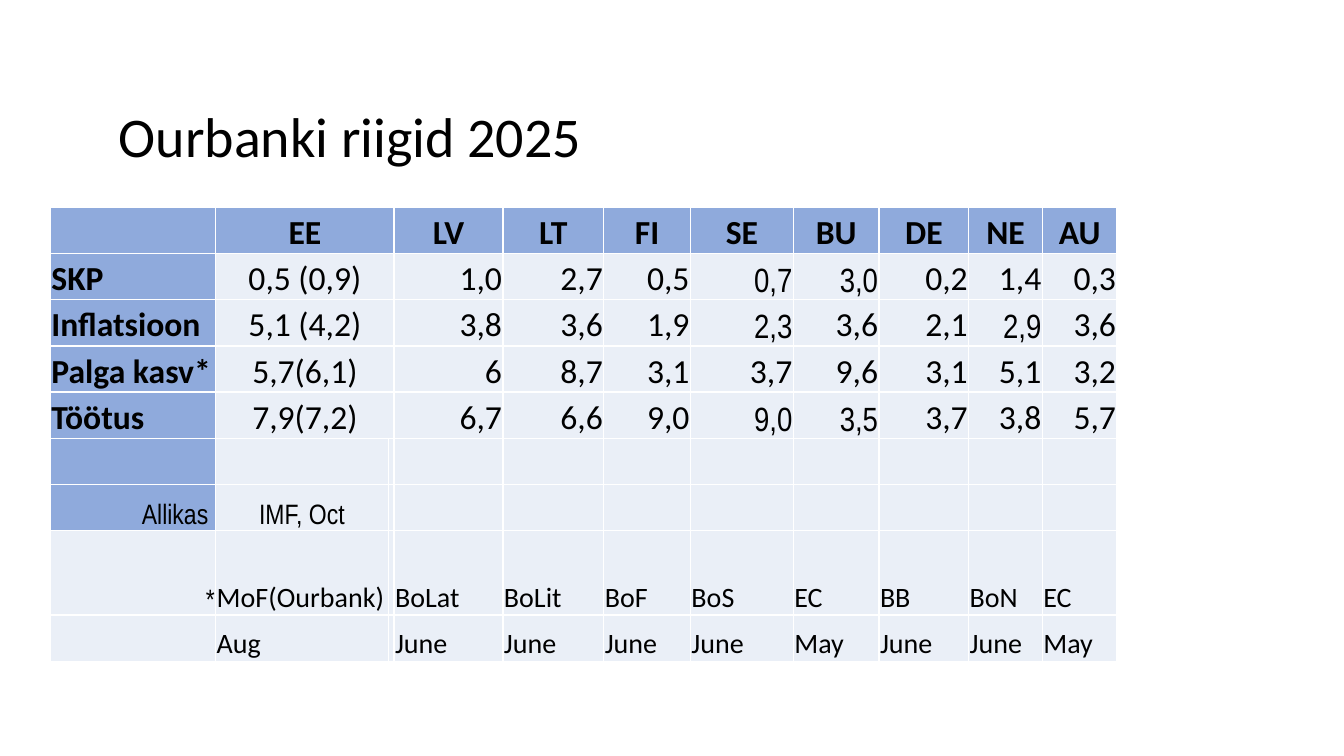
from lxml import etree
from pptx import Presentation
from pptx import util as u
from pptx.dml.color import RGBColor
from pptx.enum import text
from pptx.oxml import ns

HEADING = "Ourbanki riigid 2025"
COUNTRIES = ["", "EE", "LV", "LT", "FI", "SE", "BU", "DE", "NE", "AU"]
INDICATORS = [
    ["SKP", "0,5 (0,9)", "1,0", "2,7", "0,5", "0,7", "3,0", "0,2", "1,4", "0,3"],
    ["Inflatsioon", "5,1 (4,2)", "3,8", "3,6", "1,9", "2,3", "3,6", "2,1", "2,9", "3,6"],
    ["Palga kasv*", "5,7(6,1)", "6", "8,7", "3,1", "3,7", "9,6", "3,1", "5,1", "3,2"],
    ["Töötus", "7,9(7,2)", "6,7", "6,6", "9,0", "9,0", "3,5", "3,7", "3,8", "5,7"],
]
SOURCES = [
    [""] * 10,
    ["Allikas ", "IMF, Oct"] + [""] * 8,
    ["*", "MoF(Ourbank)", "BoLat", "BoLit", "BoF", "BoS", "EC", "BB", "BoN", "EC"],
    ["", "Aug", "June", "June", "June", "June", "May", "June", "June", "May"],
]
ROWS = [COUNTRIES] + INDICATORS + SOURCES
SOURCES_START = 1 + len(INDICATORS)
ALLIKAS_ROW = SOURCES_START + 1
NARROW_CELLS = {(1, 5), (1, 6), (2, 5), (2, 8), (4, 5), (4, 6),
                (ALLIKAS_ROW, 0), (ALLIKAS_ROW, 1), (ALLIKAS_ROW + 1, 0)}
COLUMN_WIDTHS = [1.64, 1.71, 0.05, 1.08, 1, 0.86, 1.02, 0.85, 0.89, 0.73, 0.74]
TABLE_HEIGHT = 4.5
TALL_ROW = ALLIKAS_ROW + 1
TALL_HEIGHT = 0.84
GAP_COLUMN = 2
COLORS = {"label": "8FAADC", "body": "EAEFF7", "border": "FFFFFF", "ink": "000000"}
CELL_FORMAT = {
    "vertical_anchor": text.MSO_ANCHOR.BOTTOM,
    "margin_left": u.Inches(0.01),
    "margin_right": u.Inches(0.01),
    "margin_top": u.Inches(0.01),
    "margin_bottom": 0,
}
HEADING_FORMAT = {"word_wrap": True, "vertical_anchor": text.MSO_ANCHOR.MIDDLE}


def apply(target, values):
    for name, value in values.items():
        setattr(target, name, value)


def write(paragraph, words, size, face="Calibri", bold=False):
    run = paragraph.add_run()
    run.text = words
    apply(run.font, {"size": u.Pt(size), "name": face, "bold": bold})
    run.font.color.rgb = RGBColor.from_string(COLORS["ink"])


def add_borders(cell):
    properties = cell._tc.get_or_add_tcPr()
    for position, side in enumerate(["lnL", "lnR", "lnT", "lnB"]):
        line = etree.Element(ns.qn(f"a:{side}"), w=str(u.Pt(1)))
        fill = etree.SubElement(line, ns.qn("a:solidFill"))
        etree.SubElement(fill, ns.qn("a:srgbClr"), val=COLORS["border"])
        properties.insert(position, line)


def alignment(row, column):
    if row == 0 or (column == 1 and row <= ALLIKAS_ROW):
        return text.PP_ALIGN.CENTER
    if row < SOURCES_START:
        return text.PP_ALIGN.RIGHT if column else text.PP_ALIGN.LEFT
    return text.PP_ALIGN.LEFT if column else text.PP_ALIGN.RIGHT


def is_label(row, column):
    return row == 0 or (column == 0 and row <= ALLIKAS_ROW)


def add_heading(slide):
    heading = slide.shapes.add_textbox(
        u.Inches(1.08), u.Inches(0.66), u.Inches(12.44), u.Inches(1.45)).text_frame
    apply(heading, HEADING_FORMAT)
    heading.paragraphs[0].line_spacing = 0.9
    write(heading.paragraphs[0], HEADING, 40)


def add_forecasts(slide):
    forecasts = slide.shapes.add_table(
        len(ROWS), len(COLUMN_WIDTHS), u.Inches(0.5), u.Inches(2.06),
        u.Inches(sum(COLUMN_WIDTHS)), u.Inches(TABLE_HEIGHT)).table
    apply(forecasts, {"first_row": False, "horz_banding": False})
    for column, width in zip(forecasts.columns, COLUMN_WIDTHS):
        column.width = u.Inches(width)
    plain_height = (TABLE_HEIGHT - TALL_HEIGHT) / (len(ROWS) - 1)
    for index, row in enumerate(forecasts.rows):
        row.height = u.Inches(TALL_HEIGHT if index == TALL_ROW else plain_height)

    for row in range(len(ROWS)):
        for column in range(len(COLUMN_WIDTHS)):
            cell = forecasts.cell(row, column)
            apply(cell, CELL_FORMAT)
            cell.fill.solid()
            shade = "label" if is_label(row, column) else "body"
            cell.fill.fore_color.rgb = RGBColor.from_string(COLORS[shade])
            add_borders(cell)
        if row < SOURCES_START:
            forecasts.cell(row, 1).merge(forecasts.cell(row, GAP_COLUMN))

    for row, entries in enumerate(ROWS):
        for column, words in enumerate(entries):
            if not words:
                continue
            cell = forecasts.cell(row, column + (column >= GAP_COLUMN))
            paragraph = cell.text_frame.paragraphs[0]
            paragraph.alignment = alignment(row, column)
            in_sources = row >= SOURCES_START
            write(paragraph, words, 20 if in_sources else 24,
                  "Arial Narrow" if (row, column) in NARROW_CELLS else "Calibri",
                  is_label(row, column) and not in_sources)


def main():
    deck = Presentation()
    apply(deck, {"slide_width": u.Inches(13.33), "slide_height": u.Inches(7.5)})
    slide = deck.slides.add_slide(deck.slide_layouts[6])
    add_heading(slide)
    add_forecasts(slide)
    deck.save("out.pptx")


if __name__ == "__main__":
    main()
